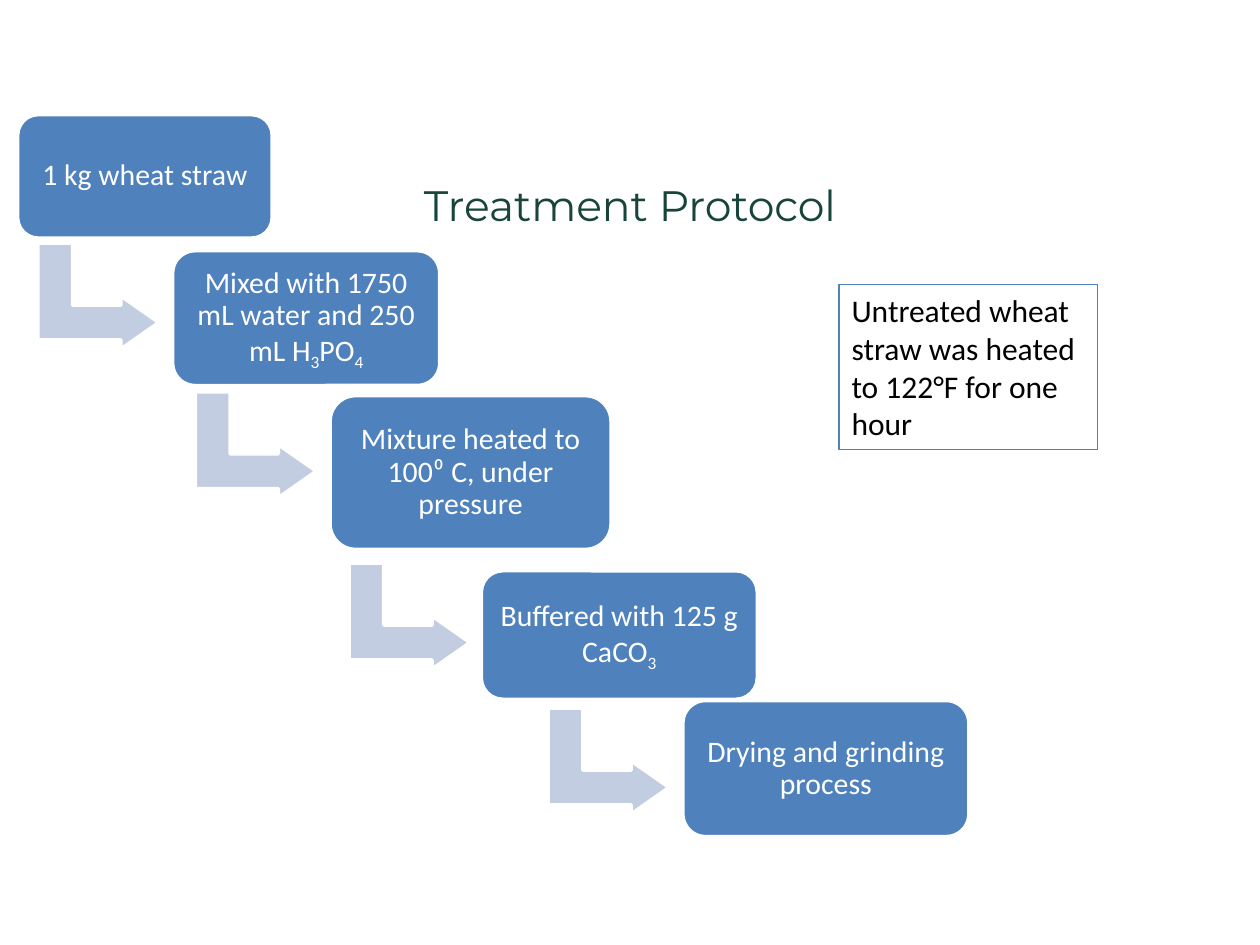
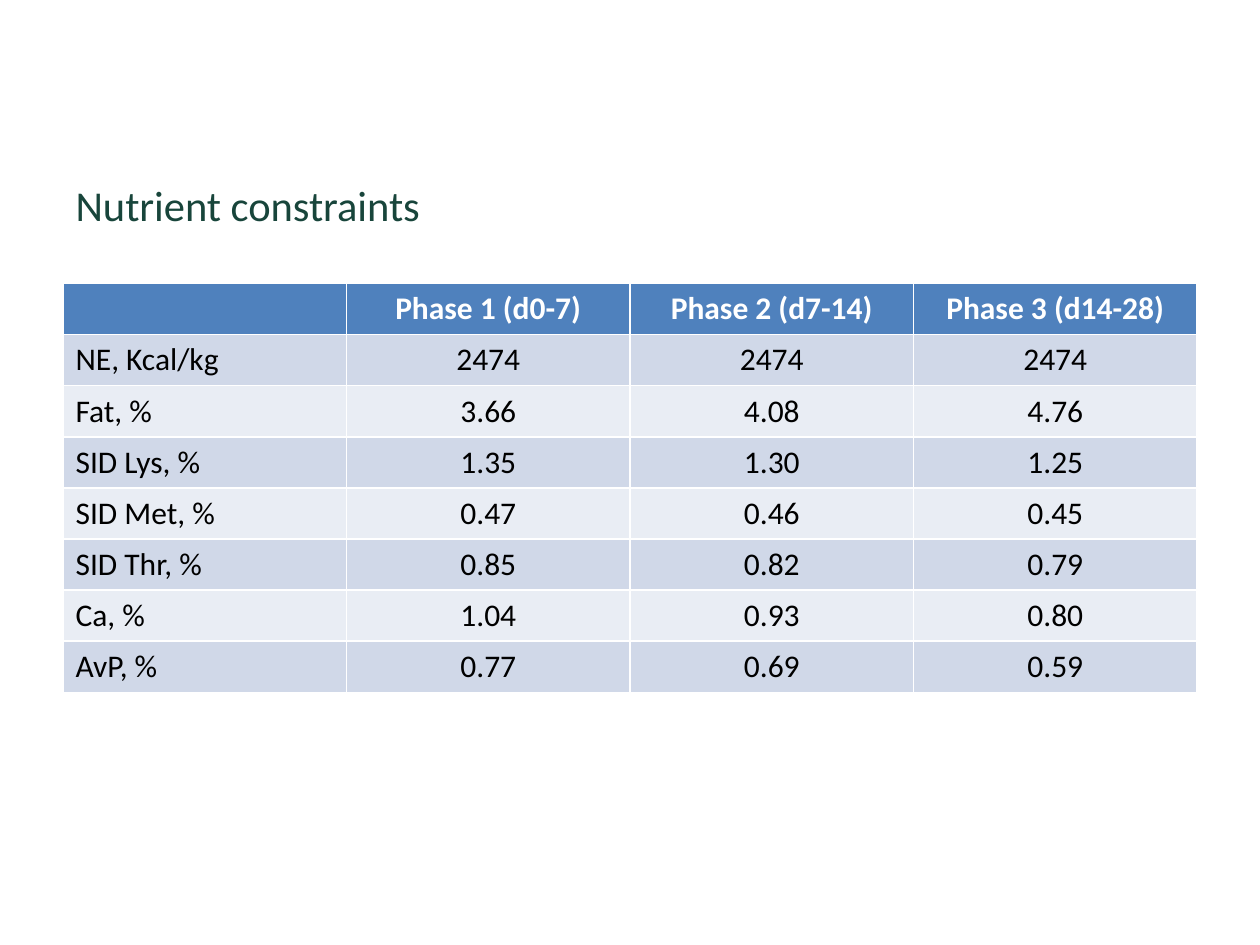
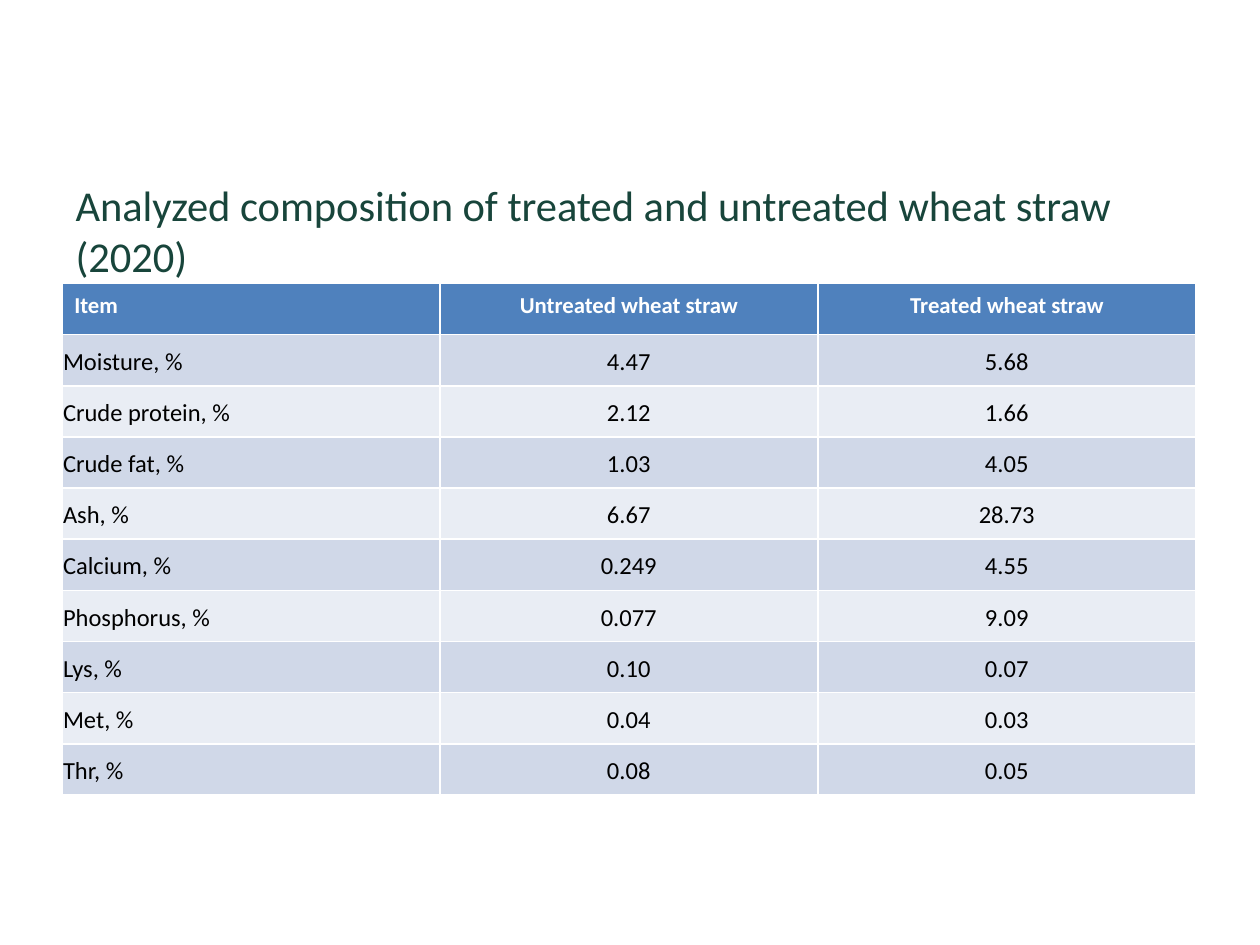
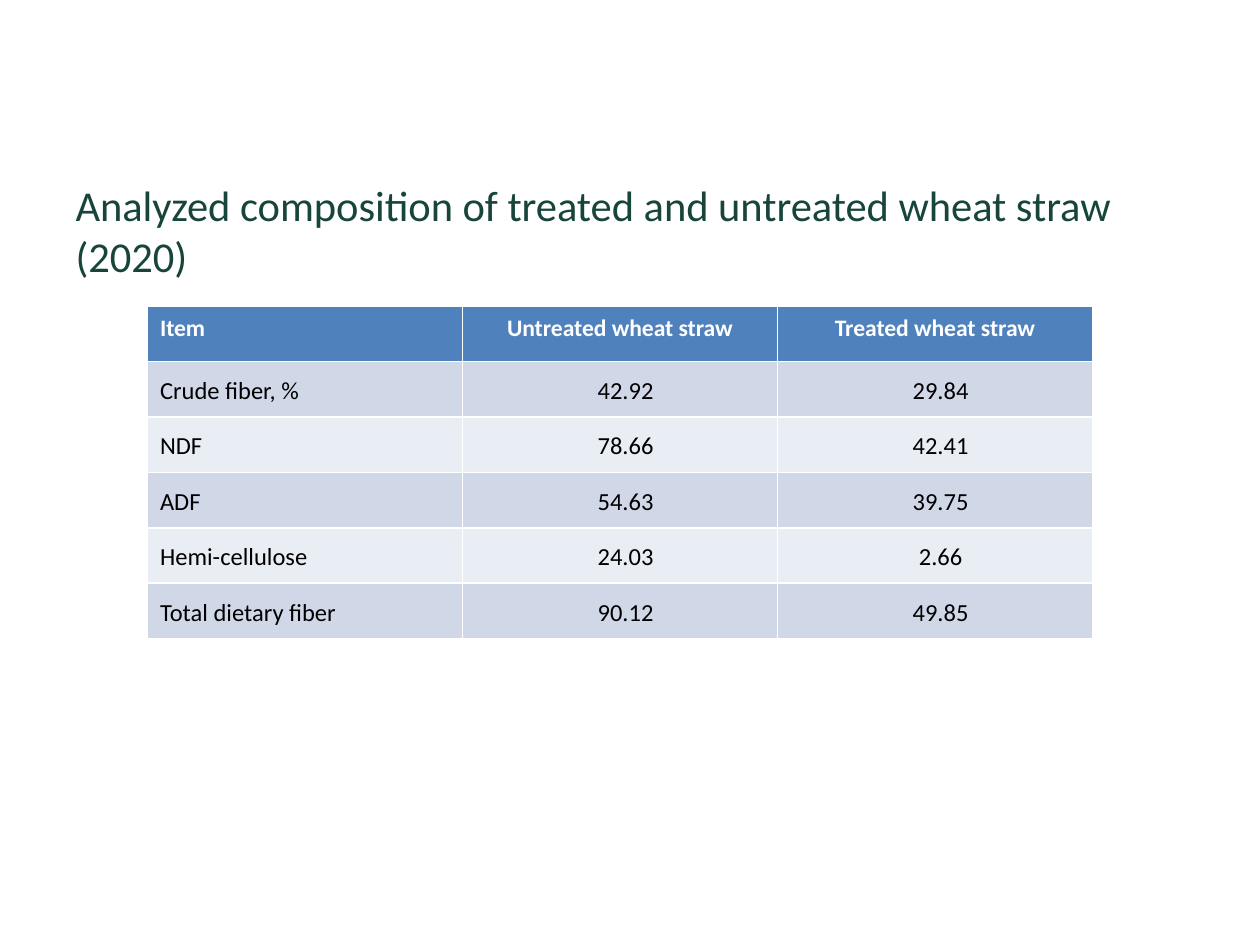
from pptx import Presentation
from pptx.dml.color import RGBColor
from pptx.enum.shapes import MSO_SHAPE
from pptx.enum.text import MSO_ANCHOR, MSO_AUTO_SIZE, PP_ALIGN
from pptx.util import Inches, Pt

COLORS = {
    "title": "18453B",
    "accent": "4F81BD",
    "arrow": "C2CDE1",
    "band_dark": "D0D8E8",
    "band_light": "E9EDF4",
    "white": "FFFFFF",
    "text": "000000",
}
BODY_FONT = "Calibri"
TITLE_ONLY_LAYOUT = 5
CELL_MARGINS = (0.1, 0.05, 0.1, 0.05)
ARROW_SIZE = (0.84, 0.96)
ARROW_ADJUSTMENTS = (0.328, 0.25, 0.358)

# Box (left, top, width, height), text runs as (text, is subscript),
# and the left and top of the arrow to the next step.
PROTOCOL_STEPS = [
    ((0.14, 0.91, 2.02, 0.98), [("1 kg wheat straw", False)], (0.36, 1.87)),
    ((1.37, 1.99, 2.12, 1.07),
     [("Mixed with 1750 mL water and 250 mL H", False), ("3", True),
      ("PO", False), ("4", True)], (1.61, 3.05)),
    ((2.62, 3.14, 2.23, 1.22),
     [("Mixture heated to 100⁰ C, under pressure", False)], (2.83, 4.41)),
    ((3.82, 4.53, 2.19, 1.02),
     [("Buffered with 125 g CaCO", False), ("3", True)], (4.41, 5.56)),
    ((5.42, 5.56, 2.27, 1.08), [("Drying and grinding process", False)], None),
]

NUTRIENT_ROWS = [
    ("", "Phase 1 (d0-7)", "Phase 2 (d7-14)", "Phase 3 (d14-28)"),
    ("NE, Kcal/kg", "2474", "2474", "2474"),
    ("Fat, %", "3.66", "4.08", "4.76"),
    ("SID Lys, %", "1.35", "1.30", "1.25"),
    ("SID Met, %", "0.47", "0.46", "0.45"),
    ("SID Thr, %", "0.85", "0.82", "0.79"),
    ("Ca, %", "1.04", "0.93", "0.80"),
    ("AvP, %", "0.77", "0.69", "0.59"),
]

COMPOSITION_TITLE = "Analyzed composition of treated and untreated wheat straw (2020)"
COMPOSITION_HEADER = ("Item", "Untreated wheat straw", "Treated wheat straw")
PROXIMATE_ROWS = [
    COMPOSITION_HEADER,
    ("Moisture, %", "4.47", "5.68"),
    ("Crude protein, %", "2.12", "1.66"),
    ("Crude fat, %", "1.03", "4.05"),
    ("Ash, %", "6.67", "28.73"),
    ("Calcium, %", "0.249", "4.55"),
    ("Phosphorus, %", "0.077", "9.09"),
    ("Lys, %", "0.10", "0.07"),
    ("Met, %", "0.04", "0.03"),
    ("Thr, %", "0.08", "0.05"),
]
FIBER_ROWS = [
    COMPOSITION_HEADER,
    ("Crude fiber, %", "42.92", "29.84"),
    ("NDF", "78.66", "42.41"),
    ("ADF", "54.63", "39.75"),
    ("Hemi-cellulose", "24.03", "2.66"),
    ("Total dietary fiber", "90.12", "49.85"),
]


def color(name):
    return RGBColor.from_string(COLORS[name])


def inches(values):
    return [Inches(value) for value in values]


def format_paragraph(paragraph, size, color_name, font=BODY_FONT, bold=False,
                     align=PP_ALIGN.LEFT, line_spacing=None):
    paragraph.alignment = align
    if line_spacing:
        paragraph.line_spacing = line_spacing
    paragraph.font.name = font
    paragraph.font.size = Pt(size)
    paragraph.font.bold = bold
    paragraph.font.color.rgb = color(color_name)


def set_margins(target, margins):
    """Set left, top, right and bottom margins of a text frame or cell."""
    (target.margin_left, target.margin_top,
     target.margin_right, target.margin_bottom) = inches(margins)


def add_titled_slide(presentation, text, font=BODY_FONT, align=PP_ALIGN.LEFT):
    slide = presentation.slides.add_slide(
        presentation.slide_layouts[TITLE_ONLY_LAYOUT])
    title = slide.shapes.title
    title.left, title.top, title.width, title.height = inches((0.5, 1.37, 9, 0.53))
    frame = title.text_frame
    frame.text = text
    frame.auto_size = MSO_AUTO_SIZE.NONE
    frame.vertical_anchor = MSO_ANCHOR.TOP
    format_paragraph(frame.paragraphs[0], 24.3, "title", font, align=align)
    return slide


def add_filled_shape(slide, kind, box, fill):
    shape = slide.shapes.add_shape(kind, *inches(box))
    shape.shadow.inherit = False
    shape.fill.solid()
    shape.fill.fore_color.rgb = color(fill)
    shape.line.color.rgb = color("white")
    shape.line.width = Pt(2)
    return shape


def add_step_arrow(slide, position):
    arrow = add_filled_shape(slide, MSO_SHAPE.BENT_UP_ARROW,
                             position + ARROW_SIZE, "arrow")
    arrow.rotation = 90
    for index, value in enumerate(ARROW_ADJUSTMENTS):
        arrow.adjustments[index] = value


def add_step_box(slide, box, runs):
    shape = add_filled_shape(slide, MSO_SHAPE.ROUNDED_RECTANGLE, box, "accent")
    frame = shape.text_frame
    frame.word_wrap = True
    frame.vertical_anchor = MSO_ANCHOR.MIDDLE
    set_margins(frame, (0.07, 0.07, 0.07, 0.07))
    paragraph = frame.paragraphs[0]
    for text, is_subscript in runs:
        run = paragraph.add_run()
        run.text = text
        if is_subscript:
            run._r.get_or_add_rPr().set("baseline", "-25000")
    format_paragraph(paragraph, 17, "white", align=PP_ALIGN.CENTER,
                     line_spacing=0.9)


def add_outlined_note(slide, box, text):
    note = slide.shapes.add_textbox(*inches(box))
    note.line.color.rgb = color("accent")
    note.line.width = Pt(0.75)
    frame = note.text_frame
    frame.word_wrap = True
    frame.auto_size = MSO_AUTO_SIZE.SHAPE_TO_FIT_TEXT
    frame.text = text
    format_paragraph(frame.paragraphs[0], 18, "text")


def add_banded_table(slide, box, rows, header_size, body_size,
                     body_margins=CELL_MARGINS, line_spacing=None):
    """Add a table with a header row, a left label column and centred values."""
    table = slide.shapes.add_table(len(rows), len(rows[0]), *inches(box)).table
    for row_index, row in enumerate(rows):
        is_header = row_index == 0
        if is_header:
            fill = "accent"
        else:
            fill = "band_dark" if row_index % 2 else "band_light"
        for column_index, text in enumerate(row):
            cell = table.cell(row_index, column_index)
            cell.text = text
            cell.fill.solid()
            cell.fill.fore_color.rgb = color(fill)
            cell.vertical_anchor = MSO_ANCHOR.TOP if is_header else MSO_ANCHOR.MIDDLE
            set_margins(cell, CELL_MARGINS if is_header else body_margins)
            format_paragraph(
                cell.text_frame.paragraphs[0],
                header_size if is_header else body_size,
                "white" if is_header else "text",
                bold=is_header,
                align=PP_ALIGN.CENTER if column_index else PP_ALIGN.LEFT,
                line_spacing=line_spacing)


def add_protocol_slide(presentation):
    slide = add_titled_slide(presentation, "Treatment Protocol", "Montserrat",
                             PP_ALIGN.CENTER)
    for box, runs, arrow_position in PROTOCOL_STEPS:
        if arrow_position:
            add_step_arrow(slide, arrow_position)
        add_step_box(slide, box, runs)
    add_outlined_note(slide, (6.66, 2.26, 2.05, 1.31),
                      "Untreated wheat straw was heated to 122°F for one hour")


def main():
    presentation = Presentation()
    presentation.slide_width = Inches(10)
    presentation.slide_height = Inches(7.5)

    add_protocol_slide(presentation)

    slide = add_titled_slide(presentation, "Nutrient constraints")
    add_banded_table(slide, (0.5, 2.25, 9, 3.24), NUTRIENT_ROWS, 18, 18)

    slide = add_titled_slide(presentation, COMPOSITION_TITLE)
    add_banded_table(slide, (0.49, 2.25, 9, 4.06), PROXIMATE_ROWS, 13, 14,
                     (0.01, 0.01, 0.01, 0), 1.07)

    slide = add_titled_slide(presentation, COMPOSITION_TITLE)
    add_banded_table(slide, (1.17, 2.43, 7.5, 2.64), FIBER_ROWS, 13.5, 14,
                     (0.1, 0.01, 0.01, 0), 1.07)

    presentation.save("out.pptx")


if __name__ == "__main__":
    main()
